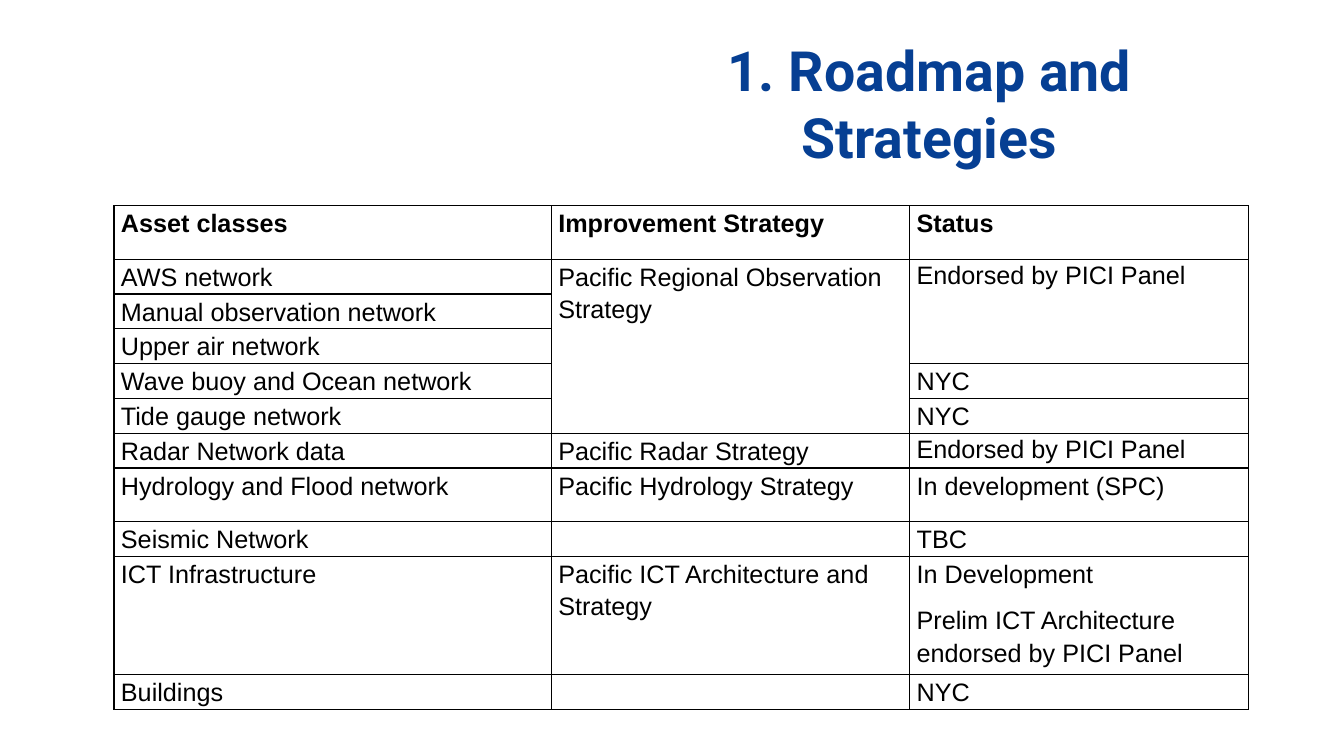
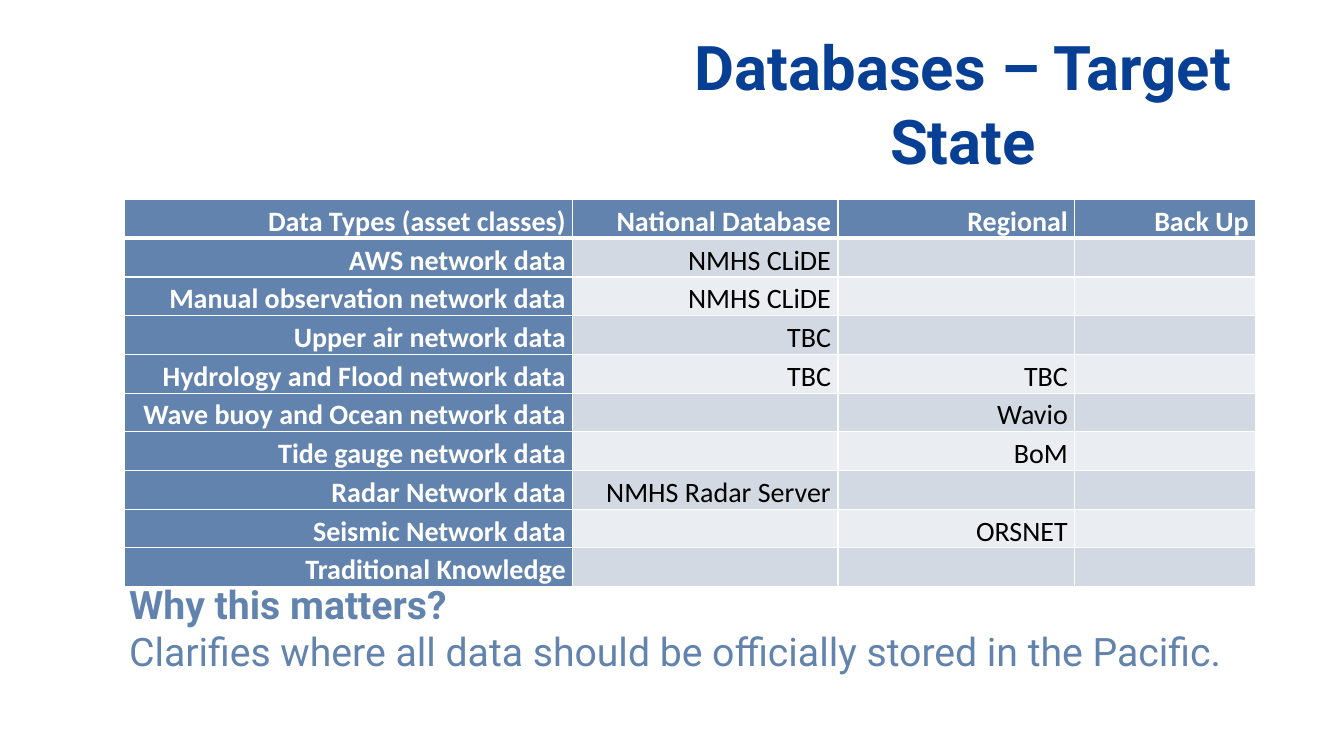
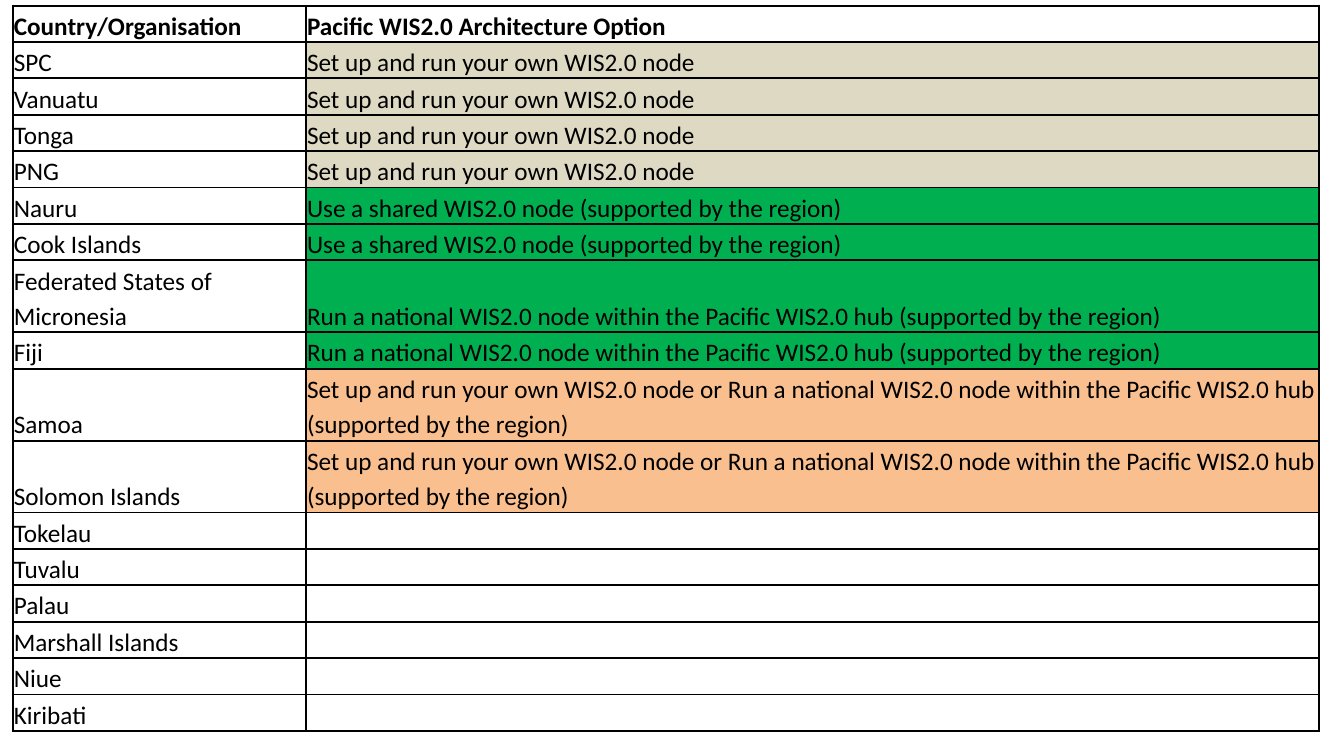
from dataclasses import dataclass

from lxml import etree
from pptx import Presentation
from pptx.dml.color import RGBColor
from pptx.enum import text as t
from pptx.oxml import ns
from pptx.util import Pt

# Shared colours and type
NAVY, STEEL = "063F93", "6283AD"
BLACK, WHITE = "000000", "FFFFFF"
BAND_DARK, BAND_LIGHT = "D3D9E3", "EAEDF1"
SAND, GREEN, PEACH = "DDD9C3", "00B050", "FABF8F"
TITLE_FONT = "Roboto"


@dataclass
class TableStyle:
    font: str
    size: float
    border: str
    border_width: float
    margins: tuple  # left, top, right, bottom
    align: object = t.PP_ALIGN.LEFT
    anchor: object = t.MSO_ANCHOR.TOP


ROADMAP_STYLE = TableStyle("Arial", 18, BLACK, 1, (5, 0, 5, 0))
DATABASE_STYLE = TableStyle("Calibri", 20, WHITE, 1, (5, 0, 5, 0),
                            align=t.PP_ALIGN.RIGHT)
NODE_STYLE = TableStyle("Calibri", 18, BLACK, 1.5, (0.7, 0.7, 0.7, 0),
                        anchor=t.MSO_ANCHOR.BOTTOM)


def rgb(color):
    return RGBColor.from_string(color)


def format_runs(paragraph, font, size, color, bold):
    for run in paragraph.runs:
        run.font.name = font
        run.font.size = Pt(size)
        run.font.color.rgb = rgb(color)
        run.font.bold = bold


# Text boxes
def add_text(slide, left, top, width, height, lines):
    box = slide.shapes.add_textbox(Pt(left), Pt(top), Pt(width), Pt(height))
    frame = box.text_frame
    frame.word_wrap = True
    frame.margin_left = frame.margin_right = Pt(3.6)
    frame.margin_top = frame.margin_bottom = Pt(3.6)
    frame.text = "\n".join(line for line, *_ in lines)
    for paragraph, (_, size, color, bold) in zip(frame.paragraphs, lines):
        format_runs(paragraph, TITLE_FONT, size, color, bold)
    return frame


def add_title(slide, title, width, size):
    frame = add_text(slide, 435.6, 23.8, width, 99.4,
                     [(title, size, NAVY, True)])
    frame.vertical_anchor = t.MSO_ANCHOR.MIDDLE
    frame.paragraphs[0].alignment = t.PP_ALIGN.CENTER


# Tables
def set_border(cell, side, color, width):
    properties = cell._tc.get_or_add_tcPr()
    line = etree.SubElement(properties, ns.qn("a:ln" + side),
                            w=str(Pt(width)), cmpd="sng")
    fill = etree.SubElement(line, ns.qn("a:solidFill"))
    etree.SubElement(fill, ns.qn("a:srgbClr"), val=color)


def format_cell(cell, content, style, fill, color, bold, bottom_width):
    (cell.margin_left, cell.margin_top,
     cell.margin_right, cell.margin_bottom) = map(Pt, style.margins)
    cell.vertical_anchor = style.anchor
    cell.text_frame.text = content
    for paragraph in cell.text_frame.paragraphs:
        paragraph.alignment = style.align
        paragraph.line_spacing = 1.15
        paragraph.space_after = Pt(10)
        format_runs(paragraph, style.font, style.size, color, bold)
    for side in "LRTB":
        width = bottom_width if side == "B" else style.border_width
        set_border(cell, side, style.border, width)
    if fill:
        cell.fill.solid()
        cell.fill.fore_color.rgb = rgb(fill)
    else:
        cell.fill.background()


def add_table(slide, left, top, widths, heights, rows, style, look,
              header_line=None):
    """look(row, column) gives the fill, text colour and bold of a cell."""
    frame = slide.shapes.add_table(len(rows), len(widths), Pt(left), Pt(top),
                                   Pt(sum(widths)), Pt(sum(heights)))
    table = frame.table
    table.first_row = table.horz_banding = False
    for column, width in zip(table.columns, widths):
        column.width = Pt(width)
    for row, height in zip(table.rows, heights):
        row.height = Pt(height)
    for r, row in enumerate(rows):
        bottom = header_line if header_line and r == 0 else style.border_width
        for c, content in enumerate(row):
            format_cell(table.cell(r, c), content, style, *look(r, c), bottom)
    return table


# Slides
def build_roadmap(slide):
    add_title(slide, "1. Roadmap and Strategies", 456.5, 39.6)
    endorsed = "Endorsed by PICI Panel"
    rows = [
        ("Asset classes", "Improvement Strategy", "Status"),
        ("AWS network", "Pacific Regional Observation Strategy", endorsed),
        ("Manual observation network", "", ""),
        ("Upper air network", "", ""),
        ("Wave buoy and Ocean network", "", "NYC"),
        ("Tide gauge network", "", "NYC"),
        ("Radar Network data", "Pacific Radar Strategy", endorsed),
        ("Hydrology and Flood network", "Pacific Hydrology Strategy",
         "In development (SPC)"),
        ("Seismic Network", "", "TBC"),
        ("ICT Infrastructure", "Pacific ICT Architecture and Strategy",
         "In Development\nPrelim ICT Architecture endorsed by PICI Panel"),
        ("Buildings", "", "NYC"),
    ]
    heights = [38.2] + [23.2] * 6 + [38.2, 23.2, 80, 23.2]
    table = add_table(slide, 81.4, 147, (312.4, 256, 242), heights, rows,
                      ROADMAP_STYLE, lambda r, c: (None, BLACK, r == 0))
    for r in (1, 6):
        table.cell(r, 2).text_frame.paragraphs[0].line_spacing = 1.07
    table.cell(1, 1).merge(table.cell(5, 1))
    table.cell(1, 2).merge(table.cell(3, 2))


def database_look(r, c):
    if r == 0 or c == 0:
        return STEEL, WHITE, True
    return (BAND_DARK if r % 2 else BAND_LIGHT), BLACK, False


def build_databases(slide):
    add_title(slide, "Databases – Target State", 504.7, 44)
    add_text(slide, 88.6, 411, 835, 75, [
        ("Why this matters?", 28, STEEL, True),
        ("Clarifies where all data should be officially stored in the "
         "Pacific.", 28, STEEL, False),
    ])
    rows = [
        ("Data Types (asset classes)", "National Database", "Regional",
         "Back Up"),
        ("AWS network data", "NMHS CLiDE", "", ""),
        ("Manual observation network data", "NMHS CLiDE", "", ""),
        ("Upper air network data", "TBC", "", ""),
        ("Hydrology and Flood network data", "TBC", "TBC", ""),
        ("Wave buoy and Ocean network data", "", "Wavio", ""),
        ("Tide gauge network data", "", "BoM", ""),
        ("Radar Network data", "NMHS Radar Server", "", ""),
        ("Seismic Network data", "", "ORSNET", ""),
        ("Traditional Knowledge", "", "", ""),
    ]
    add_table(slide, 88.8, 142.6, (320.4, 189.4, 169.2, 129.2),
              [27.6] * len(rows), rows, DATABASE_STYLE, database_look,
              header_line=3)


def build_nodes(slide):
    own = "Set up and run your own WIS2.0 node"
    region = "(supported by the region)"
    shared = f"Use a shared WIS2.0 node {region}"
    hub = f"Run a national WIS2.0 node within the Pacific WIS2.0 hub {region}"
    either = f"{own} or {hub}"
    option_fills = {own: SAND, shared: GREEN, hub: GREEN, either: PEACH}
    rows = [
        ("Country/Organisation", "Pacific WIS2.0 Architecture Option"),
        ("SPC", own),
        ("Vanuatu", own),
        ("Tonga", own),
        ("PNG", own),
        ("Nauru", shared),
        ("Cook Islands", shared),
        ("Federated States of Micronesia", hub),
        ("Fiji", hub),
        ("Samoa", either),
        ("Solomon Islands", either),
    ]
    undecided = ("Tokelau", "Tuvalu", "Palau", "Marshall Islands", "Niue",
                 "Kiribati")
    rows += [(country, "") for country in undecided]
    two_line_rows = (7, 9, 10)
    heights = [51.4 if r in two_line_rows else 26 for r in range(len(rows))]
    add_table(slide, 9.2, 4, (209.4, 723.8), heights, rows, NODE_STYLE,
              lambda r, c: (option_fills.get(rows[r][c], WHITE), BLACK, r == 0))


def main():
    presentation = Presentation()
    presentation.slide_width, presentation.slide_height = Pt(960), Pt(540)
    for build in (build_roadmap, build_databases, build_nodes):
        build(presentation.slides.add_slide(presentation.slide_layouts[6]))
    presentation.save("out.pptx")


if __name__ == "__main__":
    main()
